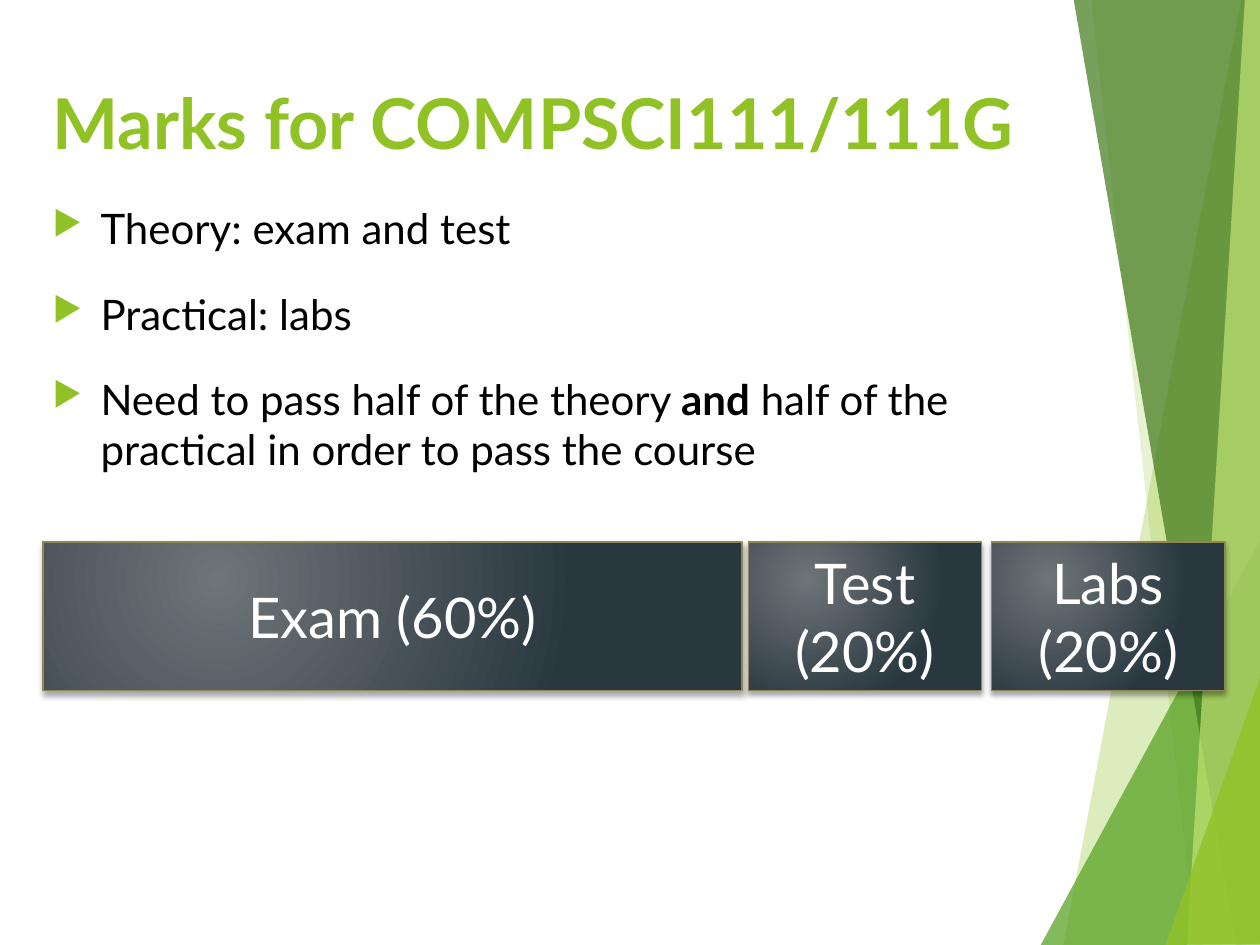
from pptx import Presentation
from pptx import util as u
from pptx.dml.color import RGBColor
from pptx.enum import shapes, text
from pptx.oxml import parse_xml
from pptx.oxml.ns import nsdecls, qn
from lxml import etree

LIME = RGBColor(0x90, 0xC2, 0x26)
GREEN = RGBColor(0x54, 0xA0, 0x21)
DARK_GREEN = RGBColor(0x3F, 0x78, 0x19)
PALE_LIME = RGBColor(0xC0, 0xE4, 0x74)
KHAKI = RGBColor(0x91, 0x86, 0x55)
BLACK = RGBColor(0, 0, 0)
WHITE = RGBColor(0xFF, 0xFF, 0xFF)

GRADIENT = f"""<a:gradFill {nsdecls('a')} rotWithShape="1"><a:gsLst>
<a:gs pos="0"><a:srgbClr val="6E7478"/></a:gs>
<a:gs pos="100000"><a:srgbClr val="29383F"/></a:gs></a:gsLst>
<a:path path="circle"><a:fillToRect l="50000" t="50000" r="100000" b="100000"/></a:path>
</a:gradFill>"""
SHADOW = f"""<a:outerShdw {nsdecls('a')} blurRad="38100" dist="25400" dir="5400000" rotWithShape="0">
<a:srgbClr val="000000"><a:alpha val="35000"/></a:srgbClr></a:outerShdw>"""
BULLET = [
    f'<a:buClr {nsdecls("a")}><a:srgbClr val="{LIME}"/></a:buClr>',
    f'<a:buSzPct {nsdecls("a")} val="80000"/>',
    f'<a:buChar {nsdecls("a")} char="▶"/>',
]


def write(frame, paragraphs, size, color, bold=False, align=text.PP_ALIGN.LEFT,
          anchor=text.MSO_ANCHOR.TOP, bullets=False, gap=0):
    """Each paragraph is a list of runs; every second run is emphasised."""
    frame.word_wrap = True
    frame.vertical_anchor = anchor
    for i, runs in enumerate(paragraphs):
        paragraph = frame.add_paragraph() if i else frame.paragraphs[0]
        paragraph.alignment = align
        if i:
            paragraph.space_before = u.Pt(gap)
        if bullets:
            props = paragraph._p.get_or_add_pPr()
            props.set("marL", str(u.Inches(0.38)))
            props.set("indent", str(u.Inches(-0.38)))
            for element in BULLET:
                props.append(parse_xml(element))
        for j, words in enumerate(runs):
            run = paragraph.add_run()
            run.text = words
            run.font.name = "Lato"
            run.font.size = u.Pt(size)
            run.font.color.rgb = color
            run.font.bold = bold or j % 2 == 1


prs = Presentation()
prs.slide_width, prs.slide_height = u.Inches(10), u.Inches(7.5)
slide = prs.slides.add_slide(prs.slide_layouts[6])

# Translucent facets along the right edge
facets = [
    (LIME, 30, [(9.85, 0), (8.44, 7.5), (10.02, 7.51), (10.01, 0.01)]),
    (LIME, 20, [(8.66, -0.01), (9.49, 7.5), (10.01, 7.5), (10.01, -0.01)]),
    (GREEN, 72, [(8.26, 7.5), (10, 4.29), (10.01, 7.5)]),
    (DARK_GREEN, 70, [(8.52, -0.01), (9.81, 7.5), (10.01, 7.49), (10.01, -0.01)]),
    (PALE_LIME, 70, [(9.88, -0.01), (9.42, 7.5), (10.01, 7.5), (10.01, -0.01)]),
    (LIME, 80, [(9.25, 7.5), (10.01, 5.35), (10.01, 7.49)]),
]
for color, opacity, corners in facets:
    start, *rest = [(u.Inches(x), u.Inches(y)) for x, y in corners]
    outline = slide.shapes.build_freeform(*start)
    outline.add_line_segments(rest, close=True)
    facet = outline.convert_to_shape()
    facet.shadow.inherit = False
    facet.line.fill.background()
    facet.fill.solid()
    facet.fill.fore_color.rgb = color
    tint = facet._element.spPr.find(qn("a:solidFill"))[0]
    etree.SubElement(tint, qn("a:alpha")).set("val", str(opacity * 1000))

# Title
title = slide.shapes.add_textbox(u.Inches(0.32), u.Inches(0.37), u.Inches(7.94), u.Inches(1.19))
write(title.text_frame, [["Marks for COMPSCI111/111G"]], 40, LIME, bold=True,
      anchor=text.MSO_ANCHOR.MIDDLE)

# Pass requirements
rules = slide.shapes.add_textbox(u.Inches(0.32), u.Inches(1.56), u.Inches(7.94), u.Inches(5.24))
write(rules.text_frame, [
    ["Theory: exam and test"],
    ["Practical: labs"],
    ["Need to pass half of the theory ", "and",
     " half of the practical in order to pass the course"],
], 24, BLACK, bullets=True, gap=20)

# Mark breakdown, each bar as wide as its share
for label, share, left in [("Exam", 60, 0.34), ("Test", 20, 5.94), ("Labs", 20, 7.87)]:
    bar = slide.shapes.add_shape(shapes.MSO_SHAPE.RECTANGLE, u.Inches(left), u.Inches(4.3),
                                 u.Inches(share * 0.0925), u.Inches(1.18))
    bar.line.color.rgb = KHAKI
    bar.line.width = u.Pt(1)
    bar.shadow.inherit = False
    props = bar._element.spPr
    props.find(qn("a:ln")).addprevious(parse_xml(GRADIENT))
    props.find(qn("a:effectLst")).append(parse_xml(SHADOW))
    write(bar.text_frame, [[f"{label} ({share}%)"]], 32, WHITE,
          align=text.PP_ALIGN.CENTER, anchor=text.MSO_ANCHOR.MIDDLE)

prs.save("out.pptx")
